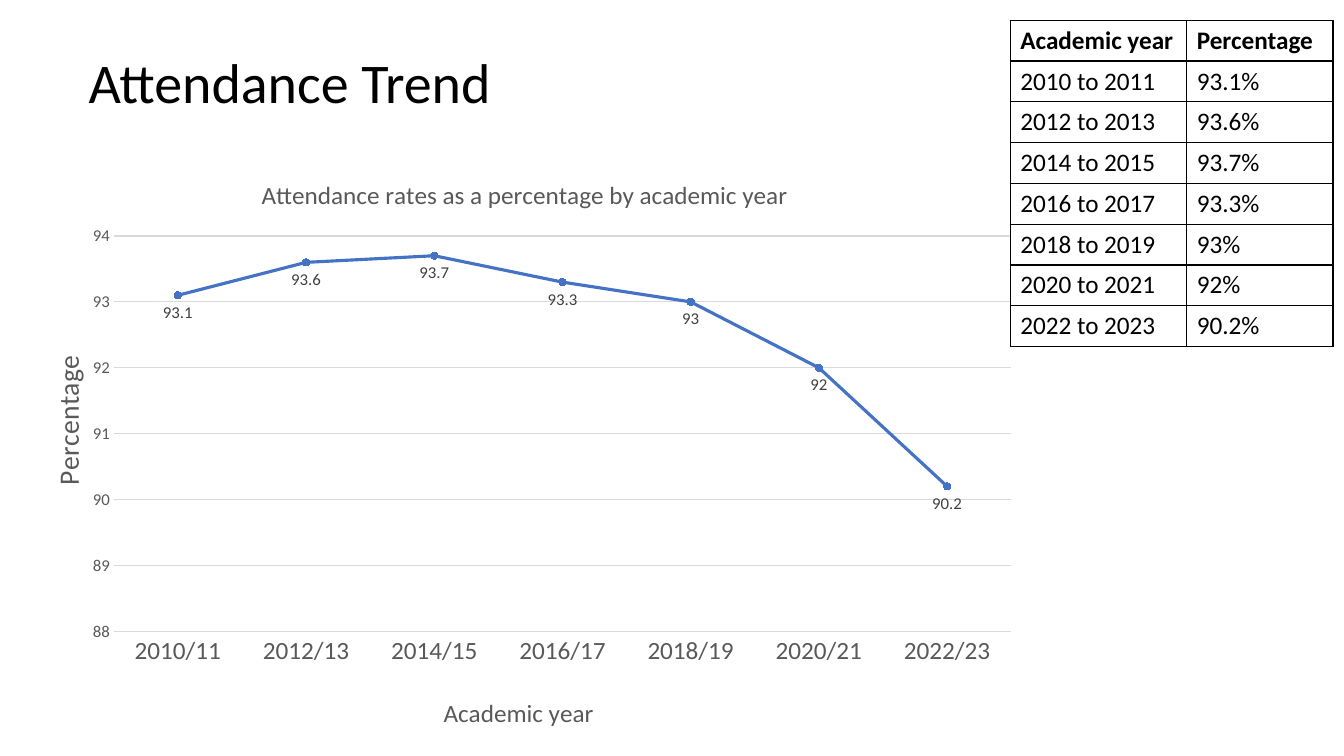
from lxml import etree
from pptx import Presentation
from pptx import util as u
from pptx.chart.data import CategoryChartData
from pptx.dml.color import RGBColor
from pptx.enum import chart as ce, text
from pptx.oxml import parse_xml
from pptx.oxml.ns import nsdecls, qn

BLACK = RGBColor(0x00, 0x00, 0x00)
WHITE = RGBColor(0xFF, 0xFF, 0xFF)
GREY = RGBColor(0x59, 0x59, 0x59)
DARK = RGBColor(0x40, 0x40, 0x40)
PALE = RGBColor(0xD9, 0xD9, 0xD9)
BLUE = RGBColor(0x44, 0x72, 0xC4)

ATTENDANCE = [(2010, 93.1), (2012, 93.6), (2014, 93.7), (2016, 93.3),
              (2018, 93), (2020, 92), (2022, 90.2)]


class AttendanceDeck:
    """Holds the style and the current slide, and adds each kind of element."""

    font = "Calibri"
    px = 9144

    def __init__(self, width, height):
        self.deck = Presentation()
        self.deck.slide_width, self.deck.slide_height = self.scale(width, height)
        self.slide = self.deck.slides.add_slide(self.deck.slide_layouts[6])

    def scale(self, *lengths):
        return [u.Emu(length * self.px) for length in lengths]

    def style(self, font, size, color, bold=False):
        values = {"name": self.font, "size": u.Pt(size), "bold": bold}
        for key, value in values.items():
            setattr(font, key, value)
        font.color.rgb = color

    def heading(self, words, box, size):
        frame = self.slide.shapes.add_textbox(*self.scale(*box)).text_frame
        values = {"word_wrap": True, "vertical_anchor": text.MSO_ANCHOR.MIDDLE}
        for key, value in values.items():
            setattr(frame, key, value)
        line = frame.paragraphs[0]
        line.line_spacing = 0.9
        run = line.add_run()
        run.text = words
        self.style(run.font, size, BLACK)

    def place(self, parent, before, target=None, **fractions):
        layout = parent.find(qn("c:layout"))
        if layout is None:
            layout = parse_xml(f"<c:layout {nsdecls('c')}/>")
            parent.find(qn(before)).addprevious(layout)
        for child in list(layout):
            layout.remove(child)
        manual = etree.SubElement(layout, qn("c:manualLayout"))
        if target:
            etree.SubElement(manual, qn("c:layoutTarget")).set("val", target)
        for key in ("x", "y"):
            etree.SubElement(manual, qn(f"c:{key}Mode")).set("val", "edge")
        for key, value in fractions.items():
            etree.SubElement(manual, qn(f"c:{key}")).set("val", str(value))

    def caption(self, owner, words, size, x, y):
        title = owner.chart_title if hasattr(owner, "chart_title") else owner.axis_title
        run = title.text_frame.paragraphs[0].add_run()
        run.text = words
        self.style(run.font, size, GREY)
        element = title.text_frame.paragraphs[0]._p.getparent().getparent().getparent()
        self.place(element, "c:overlay", x=x, y=y)

    def axis(self, axis, size, words, title_size, x, y):
        values = {"major_tick_mark": ce.XL_TICK_MARK.NONE,
                  "minor_tick_mark": ce.XL_TICK_MARK.NONE}
        for key, value in values.items():
            setattr(axis, key, value)
        self.style(axis.tick_labels.font, size, GREY)
        self.caption(axis, words, title_size, x, y)

    def hairline(self, line):
        line.color.rgb = PALE
        line.width = u.Pt(0.75)

    def trend(self, box, rates):
        data = CategoryChartData()
        data.categories = [f"{year}/{year % 100 + 1}" for year, _ in rates]
        data.add_series("Series 1", [rate for _, rate in rates])
        chart = self.slide.shapes.add_chart(
            ce.XL_CHART_TYPE.LINE_MARKERS, *self.scale(*box), data).chart
        self.style(chart.font, 10, BLACK)
        chart.has_legend = False
        self.caption(chart, "Attendance rates as a percentage by academic year",
                     18, 0.23, 0.07)
        years, percent = chart.category_axis, chart.value_axis
        self.axis(years, 18, "Academic year", 18, 0.4, 0.94)
        self.axis(percent, 12, "Percentage", 20, 0.03, 0.37)
        limits = {"minimum_scale": 88, "maximum_scale": 94, "major_unit": 1}
        for key, value in limits.items():
            setattr(percent, key, value)
        self.hairline(years.format.line)
        self.hairline(percent.major_gridlines.format.line)
        percent.format.line.fill.background()

        plot = chart.plots[0]
        plot.vary_by_categories = False
        series = plot.series[0]
        series.smooth = False
        series.format.line.color.rgb = BLUE
        series.format.line.width = u.Pt(2.25)
        marker = series.marker
        marker.style, marker.size = ce.XL_MARKER_STYLE.CIRCLE, 5
        marker.format.fill.solid()
        marker.format.fill.fore_color.rgb = BLUE
        marker.format.line.color.rgb = BLUE
        labels = series.data_labels
        values = {"show_value": True, "position": ce.XL_LABEL_POSITION.BELOW}
        for key, value in values.items():
            setattr(labels, key, value)
        self.style(labels.font, 12, DARK)
        area = chart.element.find(f".//{qn('c:plotArea')}")
        self.place(area, "c:lineChart", "inner", x=0.096, y=0.175, w=0.839, h=0.665)

    def border(self, cell):
        properties = cell._tc.get_or_add_tcPr()
        for place, side in enumerate("LRTB"):
            properties.insert(place, parse_xml(
                f'<a:ln{side} {nsdecls("a")} w="12700"><a:solidFill>'
                f'<a:srgbClr val="{BLACK}"/></a:solidFill></a:ln{side}>'))

    def table(self, box, widths, rows, size):
        grid = self.slide.shapes.add_table(
            len(rows), len(widths), *self.scale(*box)).table
        for column, width in zip(grid.columns, self.scale(*widths)):
            column.width = width
        for r, row in enumerate(rows):
            for c, words in enumerate(row):
                cell = grid.cell(r, c)
                cell.fill.solid()
                cell.fill.fore_color.rgb = WHITE
                self.border(cell)
                run = cell.text_frame.paragraphs[0].add_run()
                run.text = words
                self.style(run.font, size, BLACK, bold=r == 0)


def main():
    deck = AttendanceDeck(1333, 750)
    deck.heading("Attendance Trend", (78, 38, 575, 93), 40)
    deck.trend((11, 131, 1061, 599), ATTENDANCE)
    rows = [("Academic year", "Percentage")]
    rows += [(f"{year} to {year + 1}", f"{rate}%") for year, rate in ATTENDANCE]
    deck.table((1002, 20, 320, 324), (175, 145), rows, 18)
    deck.deck.save("out.pptx")


if __name__ == "__main__":
    main()
